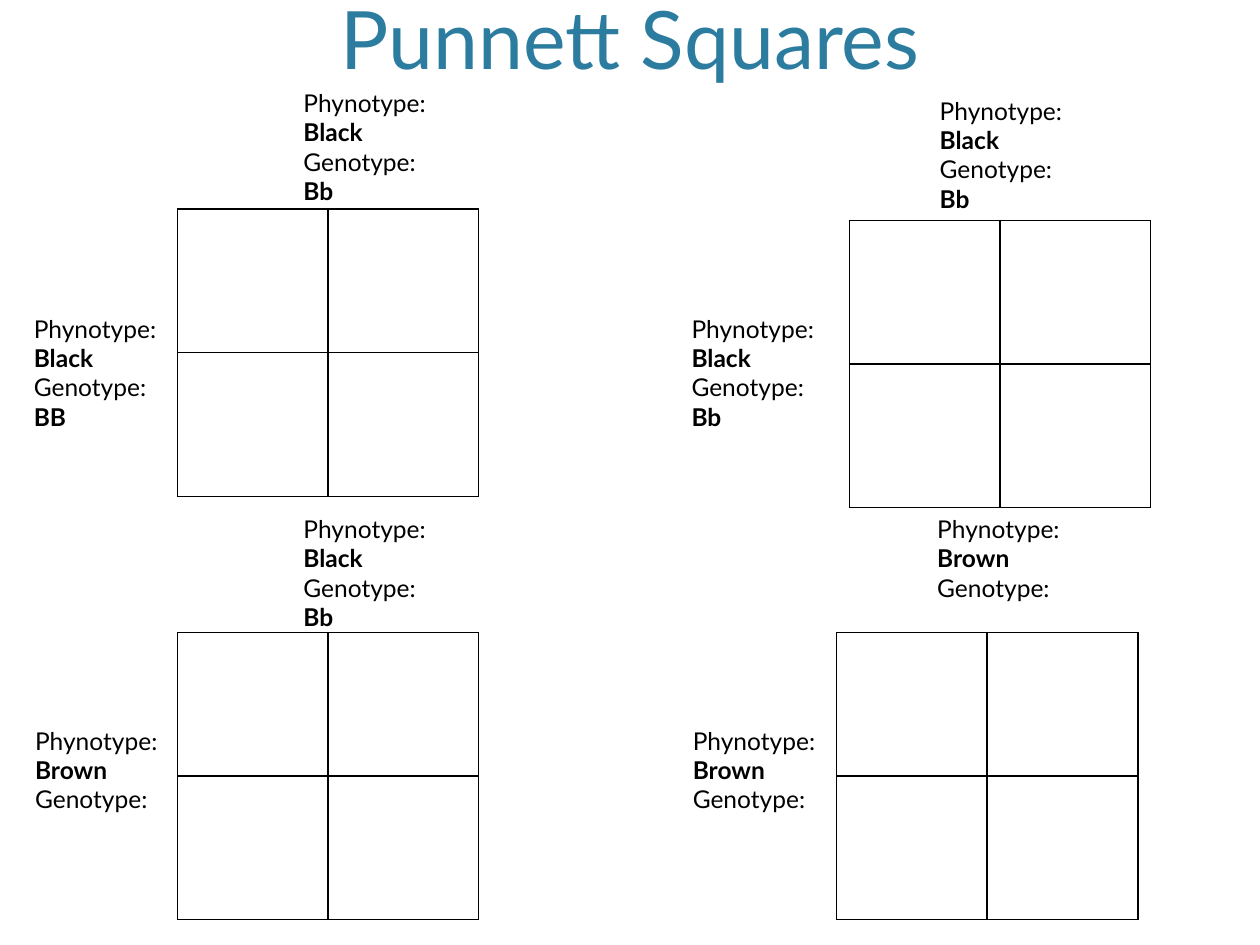
"""Build the Punnett Squares worksheet slide."""
from lxml import etree
from pptx import Presentation
from pptx.dml.color import RGBColor
from pptx.enum.text import MSO_ANCHOR, MSO_AUTO_SIZE, PP_ALIGN
from pptx.oxml.ns import qn
from pptx.util import Inches, Pt

COLORS = {"title": "2C7C9F", "text": "000000", "border": "000000"}
TITLE = "Punnett Squares"
TITLE_PLACE = (0.6, -0.73, 8.8, 1.46)
TITLE_FORMAT = {"name": "Lato", "size": Pt(46), "bold": False}
LABEL_FORMAT = {"name": "Lato", "size": Pt(14)}
LABEL_SIZE = (1.24, 1.04)
SQUARE_SIZE = (2.39, 2.28)
SQUARES = [
    {"at": (1.41, 1.66), "parents": [((2.31, 0.65), "Black", "Bb"), ((0.17, 2.44), "Black", "BB")]},
    {"at": (6.74, 1.75), "parents": [((7.36, 0.71), "Black", "Bb"), ((5.39, 2.44), "Black", "Bb")]},
    {"at": (1.41, 5.02), "parents": [((2.31, 4.03), "Black", "Bb"), ((0.18, 5.71), "Brown", "")]},
    {"at": (6.64, 5.02), "parents": [((7.34, 4.03), "Brown", ""), ((5.4, 5.71), "Brown", "")]},
]


def add_text(page, place, lines, formats, color, anchor, align):
    """Add a text box with one paragraph for each (text, bold) line."""
    box = page.shapes.add_textbox(*map(Inches, place))
    frame = box.text_frame
    frame.word_wrap = True
    frame.auto_size = MSO_AUTO_SIZE.NONE
    frame.vertical_anchor = anchor
    for index, (text, bold) in enumerate(lines):
        paragraph = frame.add_paragraph() if index else frame.paragraphs[0]
        paragraph.alignment = align
        span = paragraph.add_run()
        span.text = text
        for name, value in {**formats, "bold": bold}.items():
            setattr(span.font, name, value)
        span.font.color.rgb = RGBColor.from_string(COLORS[color])


def add_borders(cell):
    """Draw a one-point line on each side of a cell."""
    properties = cell._tc.get_or_add_tcPr()
    for position, side in enumerate(("a:lnL", "a:lnR", "a:lnT", "a:lnB")):
        line = etree.Element(qn(side), w=str(Pt(1)))
        fill = etree.SubElement(line, qn("a:solidFill"))
        etree.SubElement(fill, qn("a:srgbClr"), val=COLORS["border"])
        properties.insert(position, line)


def add_square(page, place):
    """Add an empty two by two table with bordered cells."""
    table = page.shapes.add_table(2, 2, *map(Inches, place + SQUARE_SIZE)).table
    table.first_row = False
    table.horz_banding = False
    for cell in table.iter_cells():
        cell.fill.background()
        add_borders(cell)


def add_parent(page, place, phenotype, genotype):
    """Add the label of one parent, leaving out an unknown genotype."""
    lines = [("Phynotype:", False), (phenotype, True), ("Genotype:", False), (genotype, True)]
    known = [line for line in lines if line[0]]
    add_text(page, place + LABEL_SIZE, known, LABEL_FORMAT, "text", MSO_ANCHOR.TOP, PP_ALIGN.LEFT)


def main():
    """Assemble and save the slide."""
    deck = Presentation()
    deck.slide_width, deck.slide_height = Inches(10), Inches(7.5)
    page = deck.slides.add_slide(deck.slide_layouts[6])
    add_text(page, TITLE_PLACE, [(TITLE, False)], TITLE_FORMAT, "title", MSO_ANCHOR.BOTTOM, PP_ALIGN.CENTER)
    for square in SQUARES:
        add_square(page, square["at"])
        for parent in square["parents"]:
            add_parent(page, *parent)
    deck.save("out.pptx")


if __name__ == "__main__":
    main()
